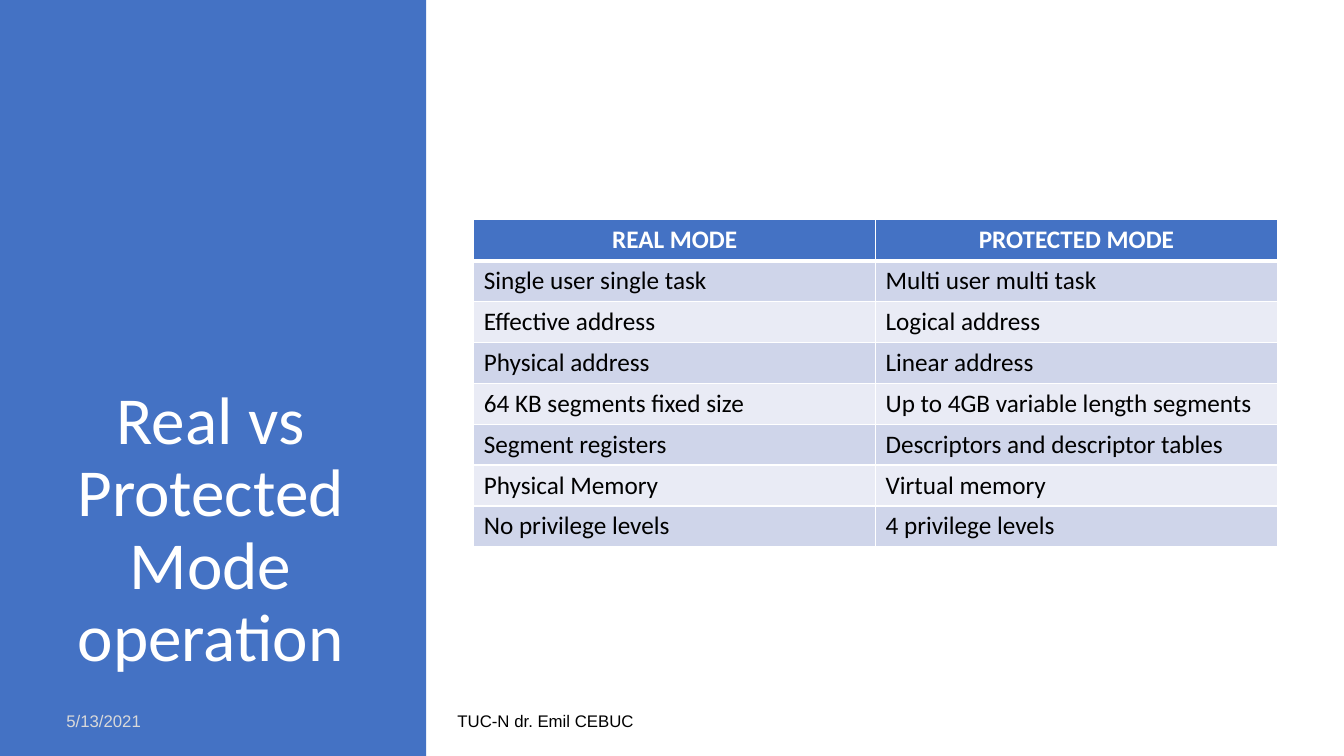
"""Build the slide comparing real mode with protected mode."""
import lxml.etree
import pptx
import pptx.dml.color
import pptx.enum.shapes
import pptx.enum.text
import pptx.oxml.ns
import pptx.util

TITLE = "Real vs Protected Mode operation"
DATE = "5/13/2021"
AUTHOR = "TUC-N dr. Emil CEBUC"
MODES = [
    ("REAL MODE", "PROTECTED MODE"),
    ("Single user single task", "Multi user multi task"),
    ("Effective address", "Logical address"),
    ("Physical address", "Linear address"),
    ("64 KB segments fixed size", "Up to 4GB variable length segments"),
    ("Segment registers", "Descriptors and descriptor tables"),
    ("Physical Memory", "Virtual memory"),
    ("No privilege levels", "4 privilege levels"),
]

THEME = {
    "accent": "4472C4",
    "bands": ("CFD5EA", "E9EBF5"),
    "border": "FFFFFF",
    "title": {"name": "Calibri", "size": 48, "color": "FFFFFF"},
    "header": {"name": "Calibri", "size": 18, "color": "FFFFFF", "bold": True},
    "body": {"name": "Calibri", "size": 18, "color": "000000", "bold": False},
    "date": {"name": "Arial", "size": 12, "color": "D9D9D9"},
    "author": {"name": "Arial", "size": 12, "color": "000000"},
}

SLIDE_WIDTH, SLIDE_HEIGHT = 960, 540
PANEL_WIDTH = 304.5
TABLE_LEFT, TABLE_TOP = 338.4, 157
COLUMN_WIDTH, ROW_HEIGHT = 287, 29.2
FOOTER_TOP, FOOTER_HEIGHT = 500.4, 28.8

Pt = pptx.util.Pt
MIDDLE = pptx.enum.text.MSO_ANCHOR.MIDDLE
BOTTOM = pptx.enum.text.MSO_ANCHOR.BOTTOM
CENTER = pptx.enum.text.PP_ALIGN.CENTER
LEFT = pptx.enum.text.PP_ALIGN.LEFT


def fill_solid(fill, color):
    fill.solid()
    fill.fore_color.rgb = pptx.dml.color.RGBColor.from_string(color)


def write_text(frame, text, style, **paragraph_format):
    paragraph = frame.paragraphs[0]
    paragraph.text = text
    for name, value in paragraph_format.items():
        setattr(paragraph, name, value)
    font = paragraph.runs[0].font
    for name, value in THEME[style].items():
        if name == "color":
            font.color.rgb = pptx.dml.color.RGBColor.from_string(value)
        else:
            setattr(font, name, Pt(value) if name == "size" else value)


def add_text(slide, text, style, box, anchor, **paragraph_format):
    frame = slide.shapes.add_textbox(*map(Pt, box)).text_frame
    frame.word_wrap = True
    frame.vertical_anchor = anchor
    write_text(frame, text, style, **paragraph_format)


def set_borders(cell, widths):
    qualified = pptx.oxml.ns.qn
    properties = cell._tc.get_or_add_tcPr()
    for side, width in widths.items():
        line = lxml.etree.SubElement(properties, qualified(f"a:ln{side}"), w=str(Pt(width)))
        solid = lxml.etree.SubElement(line, qualified("a:solidFill"))
        lxml.etree.SubElement(solid, qualified("a:srgbClr"), val=THEME["border"])


def add_mode_table(slide):
    row_count, column_count = len(MODES), len(MODES[0])
    table = slide.shapes.add_table(
        row_count, column_count, Pt(TABLE_LEFT), Pt(TABLE_TOP),
        Pt(COLUMN_WIDTH * column_count), Pt(ROW_HEIGHT * row_count)).table
    for column in table.columns:
        column.width = Pt(COLUMN_WIDTH)
    for row_index, texts in enumerate(MODES):
        table.rows[row_index].height = Pt(ROW_HEIGHT)
        is_header = row_index == 0
        color = THEME["accent"] if is_header else THEME["bands"][(row_index - 1) % 2]
        widths = {"L": 1, "R": 1, "T": 3 if row_index == 1 else 1, "B": 3 if is_header else 1}
        for column_index, text in enumerate(texts):
            cell = table.cell(row_index, column_index)
            set_borders(cell, widths)
            fill_solid(cell.fill, color)
            write_text(cell.text_frame, text, "header" if is_header else "body",
                       alignment=CENTER if is_header else LEFT)


def main():
    presentation = pptx.Presentation()
    presentation.slide_width = Pt(SLIDE_WIDTH)
    presentation.slide_height = Pt(SLIDE_HEIGHT)
    slide = presentation.slides.add_slide(presentation.slide_layouts[6])

    panel = slide.shapes.add_shape(
        pptx.enum.shapes.MSO_SHAPE.RECTANGLE, 0, 0, Pt(PANEL_WIDTH), Pt(SLIDE_HEIGHT))
    panel.shadow.inherit = False
    fill_solid(panel.fill, THEME["accent"])
    panel.line.fill.background()

    add_text(slide, TITLE, "title", (24.5, 270.7, 252, 216), BOTTOM,
             alignment=CENTER, line_spacing=0.9)
    add_mode_table(slide)
    for text, style, left, width in ((DATE, "date", 40.3, 216), (AUTHOR, "author", 319.7, 321.8)):
        add_text(slide, text, style, (left, FOOTER_TOP, width, FOOTER_HEIGHT), MIDDLE,
                 space_after=Pt(6))
    presentation.save("out.pptx")


if __name__ == "__main__":
    main()
